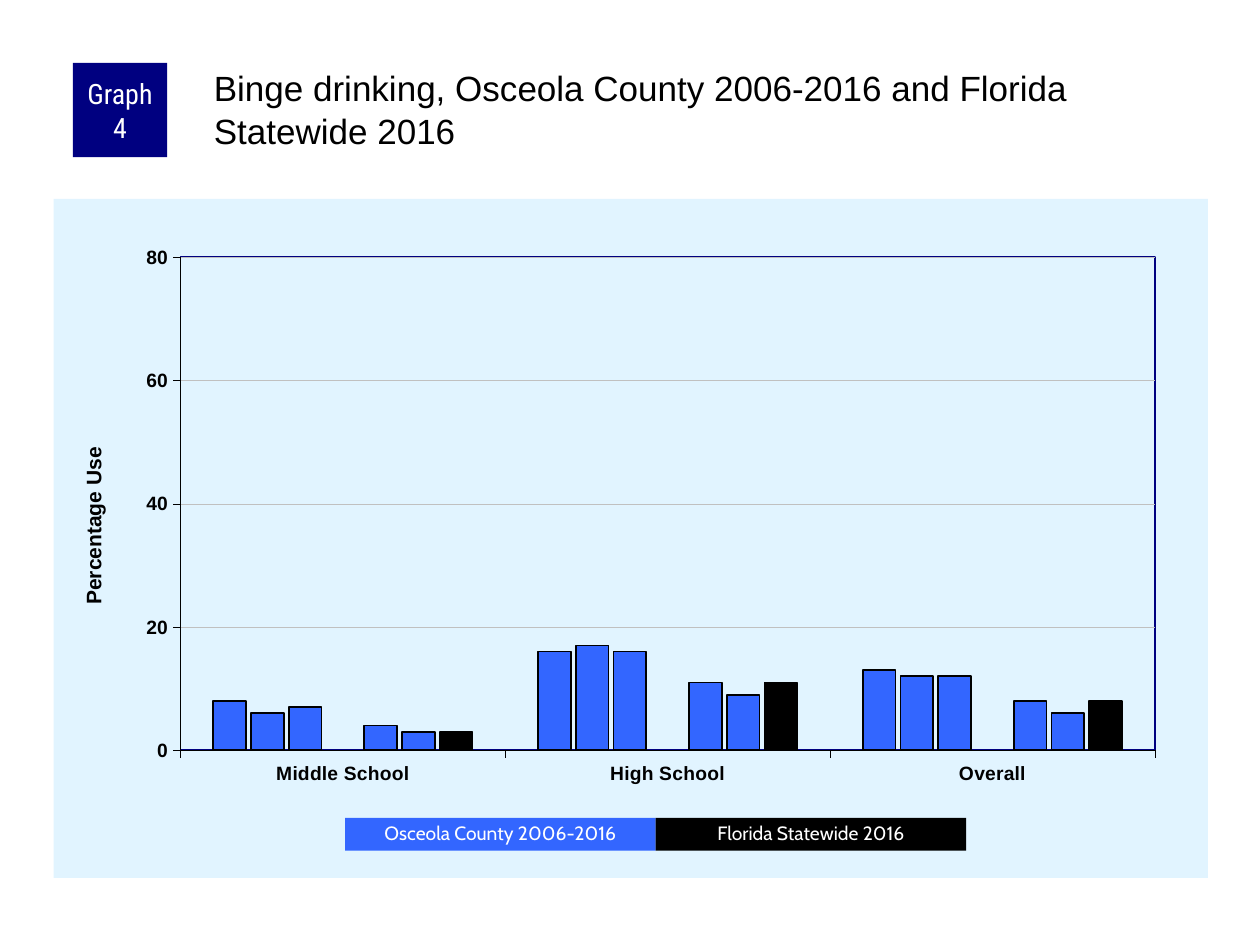
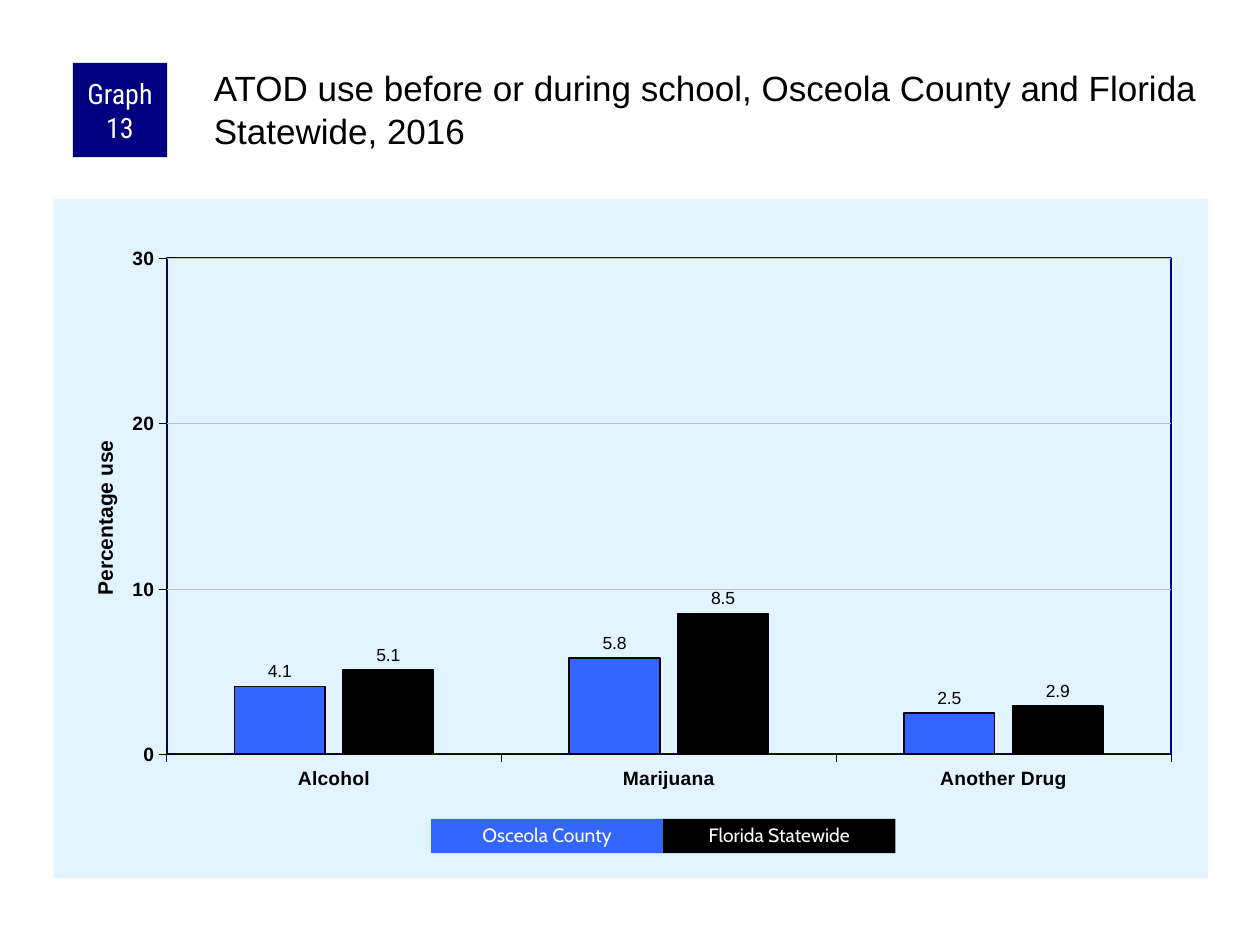
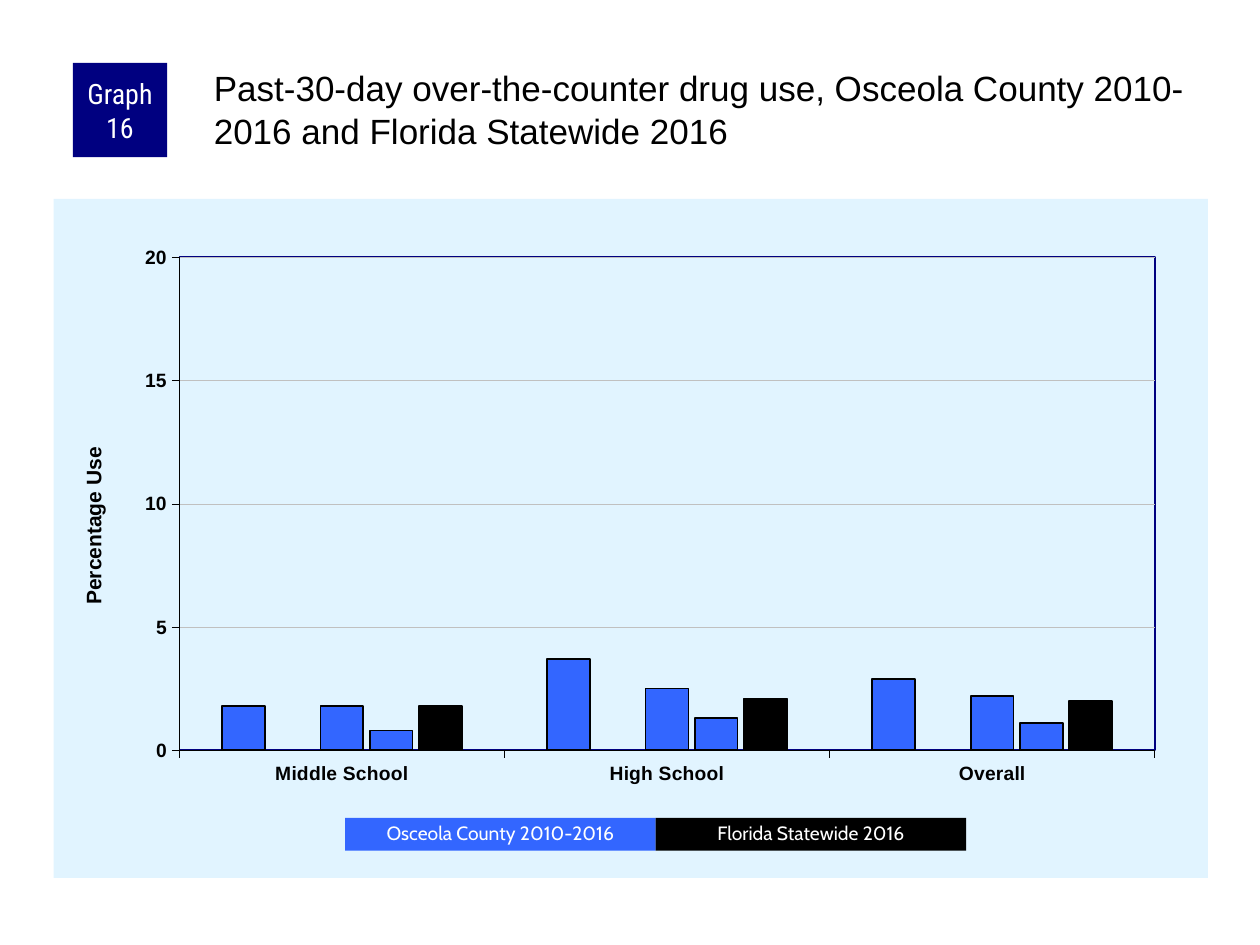
"""Build three slides of county and statewide substance use column charts."""
from dataclasses import dataclass

import pptx
import pptx.chart.axis
import pptx.chart.chart
import pptx.chart.data
import pptx.dml.color
import pptx.enum.chart
import pptx.enum.shapes
import pptx.enum.text
import pptx.oxml
import pptx.oxml.ns
import pptx.slide
import pptx.text.text
import pptx.util

Cm = pptx.util.Cm
Pt = pptx.util.Pt
RGBColor = pptx.dml.color.RGBColor

NAVY = RGBColor(0x00, 0x00, 0x80)
BLUE = RGBColor(0x33, 0x66, 0xFF)
BLACK = RGBColor(0x00, 0x00, 0x00)
WHITE = RGBColor(0xFF, 0xFF, 0xFF)
PALE_BLUE = RGBColor(0xE1, 0xF4, 0xFF)
GRID_GRAY = RGBColor(0xC0, 0xC0, 0xC0)

BODY_FONT = "Arial"
BADGE_FONT = "Roboto Condensed"
LEGEND_FONT = "Cabin"
TITLE_ONLY_LAYOUT = 5
SCHOOL_LEVELS = ("Middle School", "High School", "Overall")
MISSING = (None, None, None)


@dataclass(frozen=True)
class Box:
    """Position and size in centimetres."""

    left: float
    top: float
    width: float
    height: float

    def lengths(self) -> tuple:
        return Cm(self.left), Cm(self.top), Cm(self.width), Cm(self.height)


@dataclass(frozen=True)
class Graph:
    """Content and layout of one chart slide; the last series is statewide."""

    badge: str
    title: str
    categories: tuple
    series: tuple
    axis_title: str
    axis_title_place: tuple
    maximum: int
    step: int
    plot_place: tuple
    legend: tuple
    legend_box: Box
    gap: int = 200
    overlap: int = -15
    show_values: bool = False


BADGE_BOX = Box(1.47, 1.27, 1.9, 1.9)
TITLE_BOX = Box(4.23, 1.27, 20.12, 2.11)
CHART_BOX = Box(1.08, 4.01, 23.27, 13.69)
WIDE_LEGEND = Box(6.96, 16.49, 6.26, 0.66)
NARROW_LEGEND = Box(8.69, 16.51, 4.68, 0.69)

GRAPHS = (
    Graph(
        badge="Graph 4",
        title="Binge drinking, Osceola County 2006-2016 and Florida Statewide 2016",
        categories=SCHOOL_LEVELS,
        series=((8, 16, 13), (6, 17, 12), (7, 16, 12), MISSING,
                (4, 11, 8), (3, 9, 6), (3, 11, 8)),
        axis_title="Percentage Use",
        axis_title_place=(0.02, 0.36),
        maximum=80,
        step=20,
        plot_place=(0.11, 0.086, 0.844, 0.726),
        legend=("Osceola County 2006-2016", "Florida Statewide 2016"),
        legend_box=WIDE_LEGEND,
    ),
    Graph(
        badge="Graph 13",
        title="ATOD use before or during school, Osceola County and Florida Statewide, 2016",
        categories=("Alcohol", "Marijuana", "Another Drug"),
        series=((4.1, 5.8, 2.5), (5.1, 8.5, 2.9)),
        axis_title="Percentage use",
        axis_title_place=(0.03, 0.35),
        maximum=30,
        step=10,
        plot_place=(0.098, 0.087, 0.87, 0.731),
        legend=("Osceola County", "Florida Statewide"),
        legend_box=NARROW_LEGEND,
        gap=150,
        overlap=-20,
        show_values=True,
    ),
    Graph(
        badge="Graph 16",
        title="Past-30-day over-the-counter drug use, Osceola County 2010-2016 "
              "and Florida Statewide 2016",
        categories=SCHOOL_LEVELS,
        series=((1.8, 3.7, 2.9), MISSING, (1.8, 2.5, 2.2),
                (0.8, 1.3, 1.1), (1.8, 2.1, 2)),
        axis_title="Percentage Use",
        axis_title_place=(0.02, 0.36),
        maximum=20,
        step=5,
        plot_place=(0.109, 0.086, 0.845, 0.726),
        legend=("Osceola County 2010-2016", "Florida Statewide 2016"),
        legend_box=WIDE_LEGEND,
    ),
)


def set_font(font: pptx.text.text.Font, name: str, size: float,
             color: RGBColor, bold: bool = False) -> None:
    """Apply a typeface, size, colour and weight."""
    font.name = name
    font.size = Pt(size)
    font.bold = bold
    font.color.rgb = color


def chart_xml(body: str):
    """Parse one chart element that may hold drawing elements."""
    tag, rest = body.split(">", 1)
    return pptx.oxml.parse_xml(f"{tag} {pptx.oxml.ns.nsdecls('c', 'a')}>{rest}")


def manual_layout(place: tuple, inner: bool = False):
    """Return a layout element from fractions of the chart: x, y and perhaps w, h."""
    names = ("x", "y", "w", "h")[:len(place)]
    target = '<c:layoutTarget val="inner"/>' if inner else ""
    modes = "".join(f'<c:{name}Mode val="edge"/>' for name in names[:2])
    values = "".join(f'<c:{name} val="{value}"/>' for name, value in zip(names, place))
    return chart_xml(
        f"<c:layout><c:manualLayout>{target}{modes}{values}</c:manualLayout></c:layout>")


def replace_layout(parent, layout, index: int) -> None:
    """Put a layout in place of the one the parent has."""
    for old_layout in parent.xpath("c:layout"):
        parent.remove(old_layout)
    parent.insert(index, layout)


def add_title(slide: pptx.slide.Slide, text: str) -> None:
    """Fill and place the title placeholder."""
    title = slide.shapes.title
    title.left, title.top, title.width, title.height = TITLE_BOX.lengths()
    frame = title.text_frame
    frame.text = text
    frame.word_wrap = True
    frame.auto_size = pptx.enum.text.MSO_AUTO_SIZE.NONE
    frame.vertical_anchor = pptx.enum.text.MSO_ANCHOR.TOP
    frame.margin_left = frame.margin_top = Cm(0.08)
    frame.margin_right = frame.margin_bottom = 0
    paragraph = frame.paragraphs[0]
    paragraph.alignment = pptx.enum.text.PP_ALIGN.LEFT
    set_font(paragraph.font, BODY_FONT, 20, BLACK)


def add_label(slide: pptx.slide.Slide, box: Box, text: str, fill: RGBColor,
              font_name: str, size: float, side_margin: float,
              line_spacing: float = 1.0) -> None:
    """Draw a filled rectangle with centred white text."""
    shape = slide.shapes.add_shape(
        pptx.enum.shapes.MSO_SHAPE.RECTANGLE, *box.lengths())
    shape.shadow.inherit = False
    shape.fill.solid()
    shape.fill.fore_color.rgb = fill
    shape.line.fill.background()
    frame = shape.text_frame
    frame.text = text
    frame.word_wrap = True
    frame.vertical_anchor = pptx.enum.text.MSO_ANCHOR.MIDDLE
    frame.margin_left = frame.margin_right = Cm(side_margin)
    frame.margin_top = frame.margin_bottom = 0
    paragraph = frame.paragraphs[0]
    paragraph.alignment = pptx.enum.text.PP_ALIGN.CENTER
    paragraph.line_spacing = line_spacing
    set_font(paragraph.font, font_name, size, WHITE)


def add_legend(slide: pptx.slide.Slide, graph: Graph) -> None:
    """Draw the county and statewide keys side by side."""
    box = graph.legend_box
    for index, (text, color) in enumerate(zip(graph.legend, (BLUE, BLACK))):
        key_box = Box(box.left + index * box.width, box.top, box.width, box.height)
        add_label(slide, key_box, text, color, LEGEND_FONT, 11, 0.25, 0.9)


def style_axes(chart: pptx.chart.chart.Chart, graph: Graph) -> None:
    """Format both axes, the gridlines and the value axis title."""
    for axis in (chart.category_axis, chart.value_axis):
        axis.major_tick_mark = pptx.enum.chart.XL_TICK_MARK.OUTSIDE
        axis.minor_tick_mark = pptx.enum.chart.XL_TICK_MARK.NONE
        set_font(axis.tick_labels.font, BODY_FONT, 11, BLACK, bold=True)
        axis.format.line.color.rgb = BLACK
        axis.format.line.width = Pt(0.25)

    value_axis = chart.value_axis
    value_axis.minimum_scale = 0
    value_axis.maximum_scale = graph.maximum
    value_axis.major_unit = graph.step
    value_axis.has_major_gridlines = True
    value_axis.major_gridlines.format.line.color.rgb = GRID_GRAY
    value_axis.major_gridlines.format.line.width = Pt(0.25)

    axis_title = value_axis.axis_title
    axis_title.text_frame.text = graph.axis_title
    set_font(axis_title.text_frame.paragraphs[0].font, BODY_FONT, 12, BLACK, bold=True)
    body = axis_title.element.xpath(".//a:bodyPr")[0]
    body.set("rot", "-5400000")
    body.set("vert", "horz")
    replace_layout(axis_title.element, manual_layout(graph.axis_title_place), 1)


def style_areas(chart: pptx.chart.chart.Chart, graph: Graph) -> None:
    """Fill the chart, place the plot and give it a navy frame."""
    chart.element.xpath("c:chart")[0].addnext(chart_xml(
        f'<c:spPr><a:solidFill><a:srgbClr val="{PALE_BLUE}"/></a:solidFill>'
        "<a:ln><a:noFill/></a:ln></c:spPr>"))
    plot_area = chart.element.xpath("c:chart/c:plotArea")[0]
    replace_layout(plot_area, manual_layout(graph.plot_place, inner=True), 0)
    plot_area.append(chart_xml(
        f'<c:spPr><a:noFill/><a:ln w="{Pt(1)}"><a:solidFill>'
        f'<a:srgbClr val="{NAVY}"/></a:solidFill></a:ln></c:spPr>'))


def add_column_chart(slide: pptx.slide.Slide, graph: Graph) -> None:
    """Draw the clustered columns with the statewide series in black."""
    data = pptx.chart.data.CategoryChartData()
    data.categories = graph.categories
    for number, values in enumerate(graph.series, start=1):
        data.add_series(f"Series {number}", values)
    chart = slide.shapes.add_chart(
        pptx.enum.chart.XL_CHART_TYPE.COLUMN_CLUSTERED, *CHART_BOX.lengths(), data).chart
    chart.has_title = False
    chart.has_legend = False
    set_font(chart.font, BODY_FONT, 10, BLACK)

    plot = chart.plots[0]
    plot.vary_by_categories = False
    plot.gap_width = graph.gap
    plot.overlap = graph.overlap
    for number, series in enumerate(plot.series, start=1):
        series.invert_if_negative = False
        series.format.fill.solid()
        series.format.fill.fore_color.rgb = BLACK if number == len(graph.series) else BLUE
        series.format.line.color.rgb = BLACK
        series.format.line.width = Pt(1)
        if graph.show_values:
            labels = series.data_labels
            labels.show_value = True
            labels.number_format = "0.0"
            labels.number_format_is_linked = False
            labels.position = pptx.enum.chart.XL_LABEL_POSITION.OUTSIDE_END
            set_font(labels.font, BODY_FONT, 10, BLACK)

    style_axes(chart, graph)
    style_areas(chart, graph)


def main() -> None:
    """Build and save the presentation."""
    presentation = pptx.Presentation()
    presentation.slide_width = Cm(25.4)
    presentation.slide_height = Cm(19.05)
    for graph in GRAPHS:
        slide = presentation.slides.add_slide(
            presentation.slide_layouts[TITLE_ONLY_LAYOUT])
        add_column_chart(slide, graph)
        add_label(slide, BADGE_BOX, graph.badge, NAVY, BADGE_FONT, 16, 0.13)
        add_title(slide, graph.title)
        add_legend(slide, graph)
    presentation.save("out.pptx")


if __name__ == "__main__":
    main()
